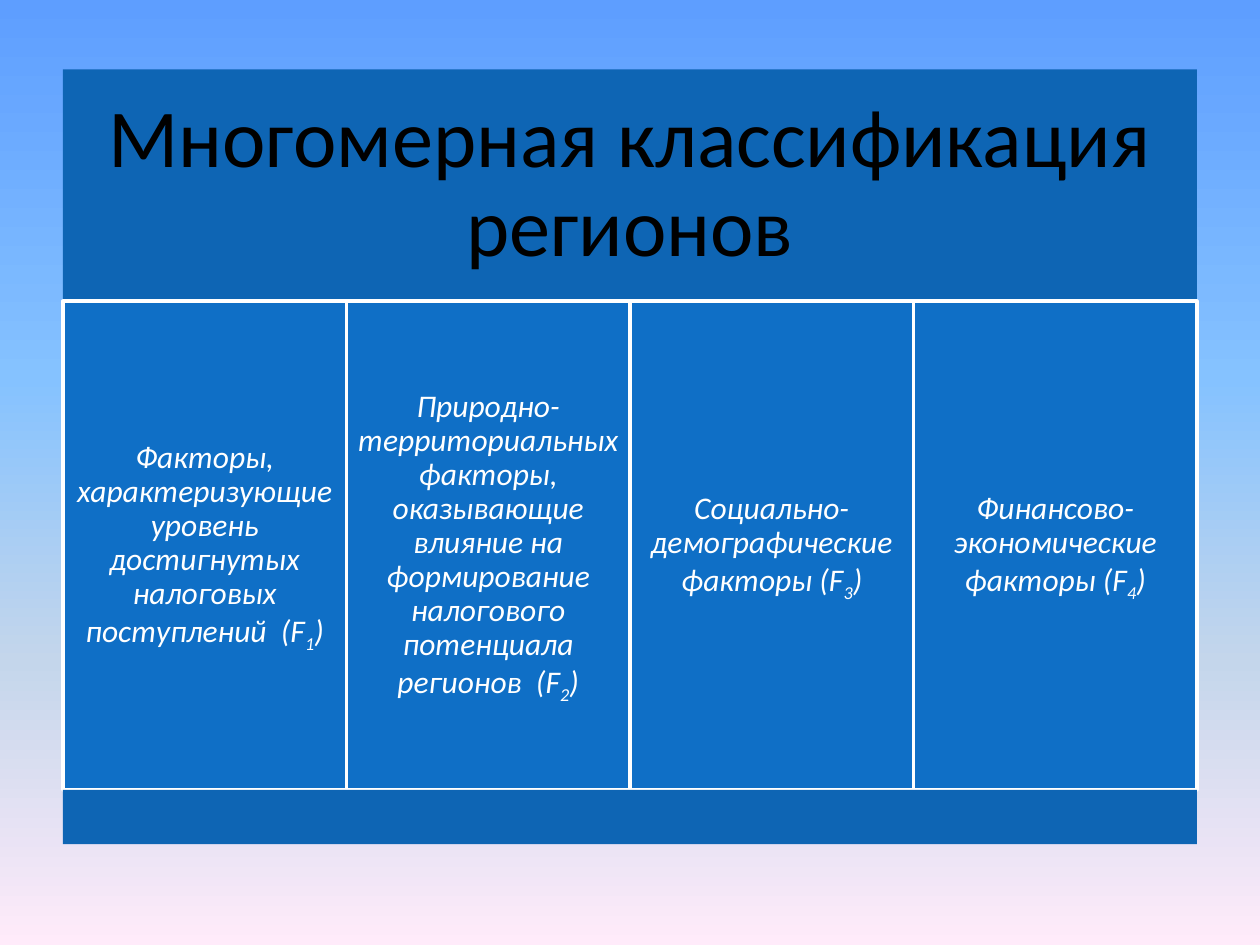
from lxml import etree
from pptx import Presentation
from pptx.dml.color import RGBColor
from pptx.enum import shapes, text
from pptx.oxml.ns import qn
from pptx.util import Inches, Pt

TITLE = "Многомерная классификация регионов"
FACTORS = [
    "Факторы, характеризующие уровень достигнутых налоговых поступлений  (F",
    "Природно-территориальных факторы, оказывающие влияние на формирование "
    "налогового потенциала регионов  (F",
    "Социально-демографические факторы (F",
    "Финансово-экономические факторы (F",
]
COLORS = {"band": "0E65B4", "cell": "0F6FC6", "white": "FFFFFF", "black": "000000"}
SKY = [(0, "5E9EFF"), (40, "85C2FF"), (70, "C4D6EB"), (100, "FFEBFA")]

LEFT, WIDTH = 0.5, 9
TITLE_TOP, CELL_TOP, FOOT_TOP, BOTTOM = 0.55, 2.39, 6.27, 6.7


def paint_background(page):
    fill = page.background.fill
    fill.gradient()
    fill.gradient_angle = 270
    stops = page.element.find(".//" + qn("a:gsLst"))
    for stop in list(stops):
        stops.remove(stop)
    for percent, color in SKY:
        stop = etree.SubElement(stops, qn("a:gs"), pos=str(percent * 1000))
        etree.SubElement(stop, qn("a:srgbClr"), val=color)


def add_block(page, left, top, width, height, color, outline=None):
    box = page.shapes.add_shape(
        shapes.MSO_SHAPE.RECTANGLE,
        Inches(left), Inches(top), Inches(width), Inches(height))
    box.shadow.inherit = False
    box.fill.solid()
    box.fill.fore_color.rgb = RGBColor.from_string(COLORS[color])
    if outline:
        box.line.color.rgb = RGBColor.from_string(COLORS[outline])
        box.line.width = Pt(2)
    else:
        box.line.fill.background()
    return box


def write(box, spans, size, color, inset, italic=False):
    """Fill the box with one centred paragraph of (text, baseline percent) spans."""
    frame = box.text_frame
    frame.word_wrap = True
    frame.vertical_anchor = text.MSO_ANCHOR.MIDDLE
    frame.margin_left = frame.margin_right = Inches(inset)
    frame.margin_top = frame.margin_bottom = Inches(inset)
    para = frame.paragraphs[0]
    para.alignment = text.PP_ALIGN.CENTER
    para.line_spacing = 0.9
    for words, baseline in spans:
        span = para.add_run()
        span.text = words
        span.font.name = "Calibri"
        span.font.size = Pt(size)
        span.font.italic = italic
        span.font.color.rgb = RGBColor.from_string(COLORS[color])
        if baseline:
            span.font._element.set("baseline", str(baseline * 1000))


def main():
    deck = Presentation()
    deck.slide_width, deck.slide_height = Inches(10), Inches(7.5)
    page = deck.slides.add_slide(deck.slide_layouts[6])
    paint_background(page)

    header = add_block(page, LEFT, TITLE_TOP, WIDTH, CELL_TOP - TITLE_TOP, "band")
    write(header, [(TITLE, 0)], size=47, color="black", inset=0.2)

    cell_width = WIDTH / len(FACTORS)
    for i, factor in enumerate(FACTORS):
        cell = add_block(page, LEFT + i * cell_width, CELL_TOP, cell_width,
                         FOOT_TOP - CELL_TOP, "cell", outline="white")
        spans = [(factor, 0), (str(i + 1), -25), (")", 0)]
        write(cell, spans, size=18, color="white", inset=0.07, italic=True)

    add_block(page, LEFT, FOOT_TOP, WIDTH, BOTTOM - FOOT_TOP, "band")
    deck.save("out.pptx")


if __name__ == "__main__":
    main()
